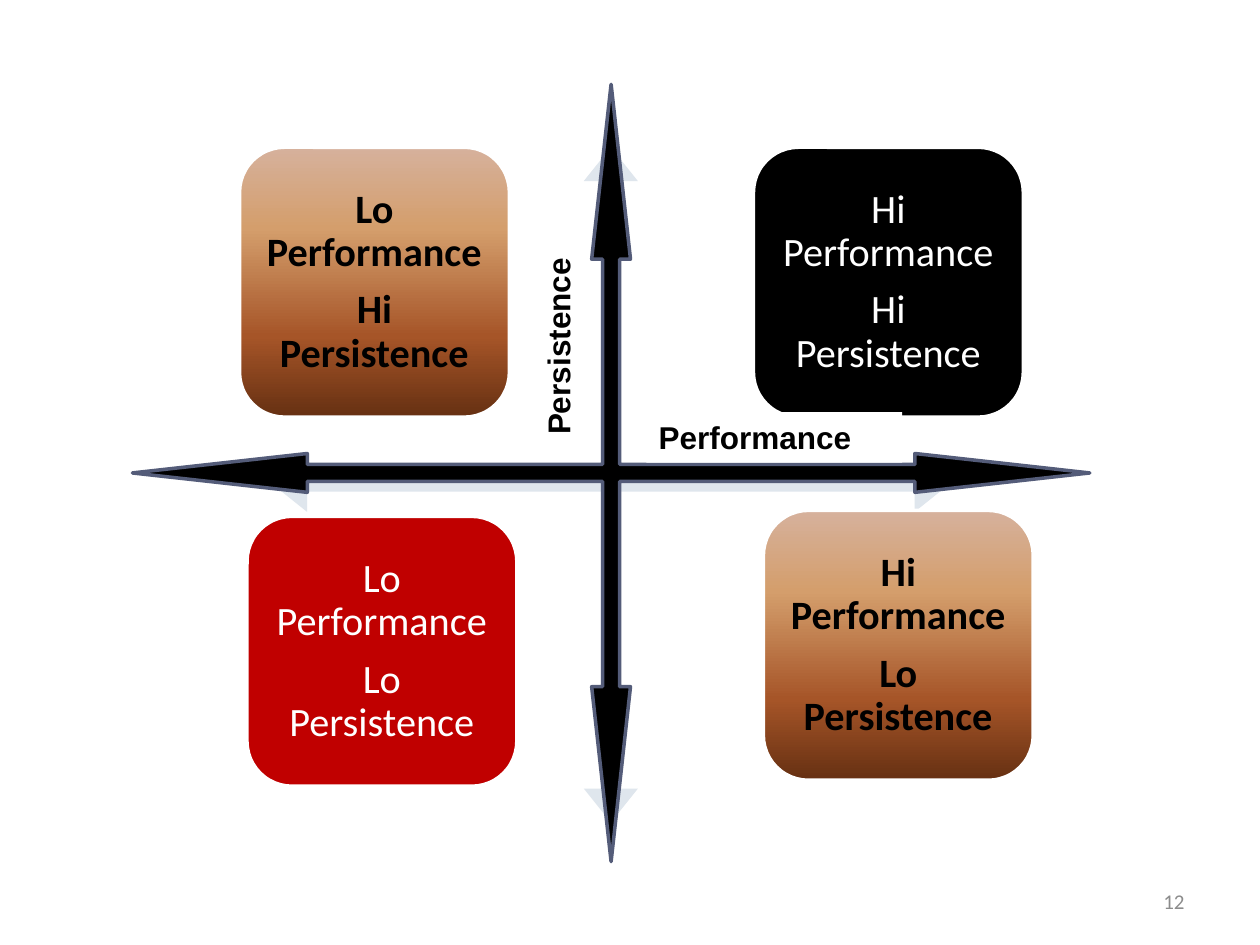
from lxml import etree
from pptx import Presentation
from pptx.dml.color import RGBColor
from pptx.enum.shapes import MSO_SHAPE
from pptx.enum.text import MSO_ANCHOR, PP_ALIGN
from pptx.oxml.ns import qn
from pptx.util import Cm, Pt

QUAD_ARROW, ROUNDED = MSO_SHAPE.QUAD_ARROW, MSO_SHAPE.ROUNDED_RECTANGLE
TOP, MIDDLE = MSO_ANCHOR.TOP, MSO_ANCHOR.MIDDLE
LEFT, CENTER, RIGHT = PP_ALIGN.LEFT, PP_ALIGN.CENTER, PP_ALIGN.RIGHT
BLANK_LAYOUT = 6
BLACK, WHITE, RED = "000000", "FFFFFF", "C00000"
BRONZE = [(0, "D6B19C"), (30, "D49E6C"), (70, "A65528"), (100, "663012")]
TILE_SIZE = 5.44


def color(value):
    return RGBColor.from_string(value)


class MatrixSlide:
    """Holds the slide and draws its arrows, quadrants and labels."""

    def __init__(self, presentation):
        self.slide = presentation.slides.add_slide(presentation.slide_layouts[BLANK_LAYOUT])

    def shape(self, preset, box, fill, line=None):
        shape = self.slide.shapes.add_shape(preset, *map(Cm, box))
        shape.shadow.inherit = False
        self.paint(shape.fill, fill)
        if line:
            shape.line.color.rgb = color(line)
            shape.line.width = Pt(2)
        else:
            shape.line.fill.background()
        return shape

    def paint(self, fill, paint):
        if isinstance(paint, str):
            fill.solid()
            fill.fore_color.rgb = color(paint)
            return
        fill.gradient()
        fill.gradient_angle = 270
        stops = fill._fill._gradFill.find(qn("a:gsLst"))
        for stop in list(stops):
            stops.remove(stop)
        for percent, shade in paint:
            stop = etree.SubElement(stops, qn("a:gs"), pos=str(percent * 1000))
            etree.SubElement(stop, qn("a:srgbClr"), val=shade)

    def add_text(self, paragraph, text, size, font, ink, bold, align):
        paragraph.alignment = align
        run = paragraph.add_run()
        run.text = text
        run.font.size = Pt(size)
        run.font.name = font
        run.font.bold = bold
        run.font.color.rgb = color(ink)

    def arrows(self, box, adjustments, fill, line=None):
        cross = self.shape(QUAD_ARROW, box, fill, line)
        for index, value in enumerate(adjustments):
            cross.adjustments[index] = value

    def quadrant(self, left, top, levels, fill, ink, bold):
        tile = self.shape(ROUNDED, (left, top, TILE_SIZE, TILE_SIZE), fill, WHITE)
        frame = tile.text_frame
        frame.word_wrap = True
        frame.vertical_anchor = MIDDLE
        frame.margin_left = frame.margin_right = Cm(0.25)
        frame.margin_top = frame.margin_bottom = Cm(0.25)
        for index, (level, trait) in enumerate(zip(levels, ("Performance", "Persistence"))):
            paragraph = frame.add_paragraph() if index else frame.paragraphs[0]
            paragraph.line_spacing = 0.9
            paragraph.space_after = Pt(8)
            self.add_text(paragraph, f"{level} {trait}", 23, "Calibri", ink, bold, CENTER)

    def label(self, box, text, size=18, font="Arial", ink=BLACK, bold=True,
              align=LEFT, anchor=TOP, fill=None, upward=False):
        label = self.slide.shapes.add_textbox(*map(Cm, box))
        if fill:
            self.paint(label.fill, fill)
        frame = label.text_frame
        frame.word_wrap = True
        frame.vertical_anchor = anchor
        if upward:
            frame._txBody.bodyPr.set("vert", "vert270")
        self.add_text(frame.paragraphs[0], text, size, font, ink, bold, align)


def main():
    presentation = Presentation()
    presentation.slide_width, presentation.slide_height = Cm(25.4), Cm(19.05)
    matrix = MatrixSlide(presentation)

    matrix.arrows((5.51, 2.97, 13.61, 13.61), (0.02, 0.04, 0.05), "DFE6ED")
    quadrants = [
        (4.83, 2.97, ("Lo", "Hi"), BRONZE, BLACK, True),
        (15.19, 2.97, ("Hi", "Hi"), BLACK, WHITE, False),
        (4.98, 10.41, ("Lo", "Lo"), RED, WHITE, False),
        (15.39, 10.29, ("Hi", "Lo"), BRONZE, BLACK, True),
    ]
    for quadrant in quadrants:
        matrix.quadrant(*quadrant)
    matrix.arrows((2.67, 1.7, 19.3, 15.67), (0.022, 0.025, 0.225), BLACK, "545C79")

    matrix.label((13.03, 8.31, 5.16, 1.02), "Performance", fill=WHITE)
    matrix.label((10.74, 4.88, 1.27, 4.14), "Persistence", upward=True)
    matrix.label((18.21, 17.65, 5.92, 1.02), "12", size=12, font="Calibri",
                 ink="8C8C8C", bold=False, align=RIGHT, anchor=MIDDLE)
    presentation.save("out.pptx")


if __name__ == "__main__":
    main()
